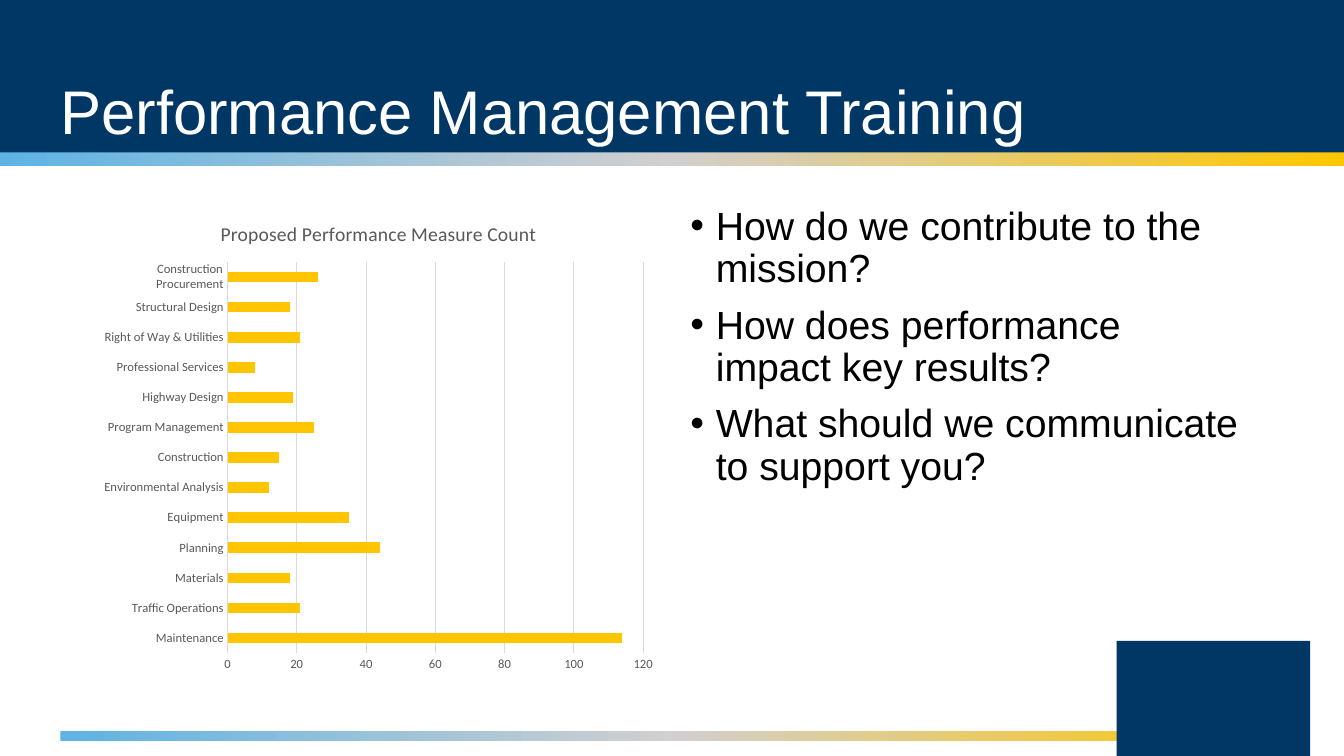
from copy import deepcopy

from lxml import etree
from pptx import Presentation
from pptx import util as u
from pptx.chart import data as chart_data
from pptx.dml.color import RGBColor
from pptx.enum import chart as chart_enum
from pptx.enum import shapes, text
from pptx.oxml import ns

NAVY = RGBColor(0x00, 0x37, 0x64)
SKY = RGBColor(0x5E, 0xB3, 0xE4)
SILVER = RGBColor(0xD1, 0xCF, 0xCF)
GOLD = RGBColor(0xFF, 0xC6, 0x00)
WHITE = RGBColor(0xFF, 0xFF, 0xFF)
BLACK = RGBColor(0x00, 0x00, 0x00)
LABEL_GREY = RGBColor(0x59, 0x59, 0x59)
GRID_GREY = RGBColor(0xD9, 0xD9, 0xD9)

SLIDE_WIDTH = 33.87


def add_block(left, top, width, height, colors):
    """Add a rectangle with one colour, or a gradient running left to right."""
    shape = slide.shapes.add_shape(
        shapes.MSO_SHAPE.RECTANGLE, u.Cm(left), u.Cm(top), u.Cm(width), u.Cm(height))
    shape.shadow.inherit = False
    shape.line.fill.background()
    if len(colors) == 1:
        shape.fill.solid()
        shape.fill.fore_color.rgb = colors[0]
        return shape
    shape.fill.gradient()
    shape.fill.gradient_angle = 0
    stop_list = shape._element.find(".//" + ns.qn("a:gsLst"))
    while len(stop_list) < len(colors):
        stop_list.append(deepcopy(stop_list[0]))
    for index, (stop, color) in enumerate(zip(shape.fill.gradient_stops, colors)):
        stop.position = index / (len(colors) - 1)
        stop.color.rgb = color
    return shape


def write_text(frame, lines, size, color, bullet=None, space_before=0):
    """Write each line as a left-aligned paragraph, with an optional bullet."""
    frame.word_wrap = True
    for index, line in enumerate(lines):
        paragraph = frame.paragraphs[0] if index == 0 else frame.add_paragraph()
        paragraph.text = line
        if bullet:
            properties = paragraph._p.get_or_add_pPr()
            properties.set("marL", str(u.Cm(0.64)))
            properties.set("indent", str(-u.Cm(0.64)))
            etree.SubElement(properties, ns.qn("a:buFont")).set("typeface", "Arial")
            etree.SubElement(properties, ns.qn("a:buChar")).set("char", bullet)
        paragraph.alignment = text.PP_ALIGN.LEFT
        paragraph.line_spacing = 0.9
        if index:
            paragraph.space_before = u.Pt(space_before)
        paragraph.font.name = "Arial"
        paragraph.font.size = u.Pt(size)
        paragraph.font.color.rgb = color


presentation = Presentation()
presentation.slide_width = u.Cm(SLIDE_WIDTH)
presentation.slide_height = u.Cm(19.05)
slide = presentation.slides.add_slide(presentation.slide_layouts[6])

# Footer stripe and corner block
add_block(1.52, 18.42, 30.84, 0.25, [SKY, SILVER, GOLD])
add_block(28.14, 16.15, 4.88, 2.9, [NAVY])

# Header stripe and title band
add_block(0, 3.76, SLIDE_WIDTH, 0.43, [SKY, SILVER, GOLD])
title_band = add_block(0, 0, SLIDE_WIDTH, 3.84, [NAVY])
title_frame = title_band.text_frame
title_frame.vertical_anchor = text.MSO_ANCHOR.BOTTOM
title_frame.margin_left = u.Cm(1.52)
write_text(title_frame, ["Performance Management Training"], size=44, color=WHITE)

# Questions
questions = slide.shapes.add_textbox(u.Cm(17.15), u.Cm(5.08), u.Cm(14.4), u.Cm(12.09))
write_text(
    questions.text_frame,
    ["How do we contribute to the mission?",
     "How does performance impact key results?",
     "What should we communicate to support you?"],
    size=28, color=BLACK, bullet="•", space_before=10)

# Measure count chart
measure_counts = {
    "Maintenance": 114,
    "Traffic Operations": 21,
    "Materials": 18,
    "Planning": 44,
    "Equipment": 35,
    "Environmental Analysis": 12,
    "Construction": 15,
    "Program Management": 25,
    "Highway Design": 19,
    "Professional Services": 8,
    "Right of Way & Utilities": 21,
    "Structural Design": 18,
    "Construction Procurement": 26,
}
counts = chart_data.CategoryChartData()
counts.categories = list(measure_counts)
counts.add_series("Series 1", list(measure_counts.values()))
chart = slide.shapes.add_chart(
    chart_enum.XL_CHART_TYPE.BAR_CLUSTERED,
    u.Cm(2.34), u.Cm(5.08), u.Cm(14.4), u.Cm(12.09), counts).chart
chart.has_legend = False
chart.font.name = "Calibri"
chart.font.size = u.Pt(10)
chart.font.color.rgb = BLACK

chart.has_title = True
chart.chart_title.include_in_layout = False
chart_title = chart.chart_title.text_frame.paragraphs[0]
chart_title.text = "Proposed Performance Measure Count"
chart_title.font.name = "Calibri"
chart_title.font.size = u.Pt(14)
chart_title.font.bold = False
chart_title.font.color.rgb = LABEL_GREY

plot = chart.plots[0]
plot.gap_width = 182
plot.vary_by_categories = False
bars = plot.series[0]
bars.format.fill.solid()
bars.format.fill.fore_color.rgb = GOLD

# Chart axes
for axis in (chart.category_axis, chart.value_axis):
    axis.major_tick_mark = chart_enum.XL_TICK_MARK.NONE
    axis.minor_tick_mark = chart_enum.XL_TICK_MARK.NONE
    axis.tick_labels.font.name = "Calibri"
    axis.tick_labels.font.size = u.Pt(9)
    axis.tick_labels.font.color.rgb = LABEL_GREY
chart.category_axis.has_major_gridlines = False
chart.value_axis.has_major_gridlines = True
chart.value_axis.minimum_scale = 0
chart.value_axis.maximum_scale = 120
chart.value_axis.major_unit = 20
for line in (chart.category_axis.format.line, chart.value_axis.major_gridlines.format.line):
    line.color.rgb = GRID_GREY
    line.width = u.Pt(0.75)
chart.value_axis.format.line.fill.background()

presentation.save("out.pptx")
